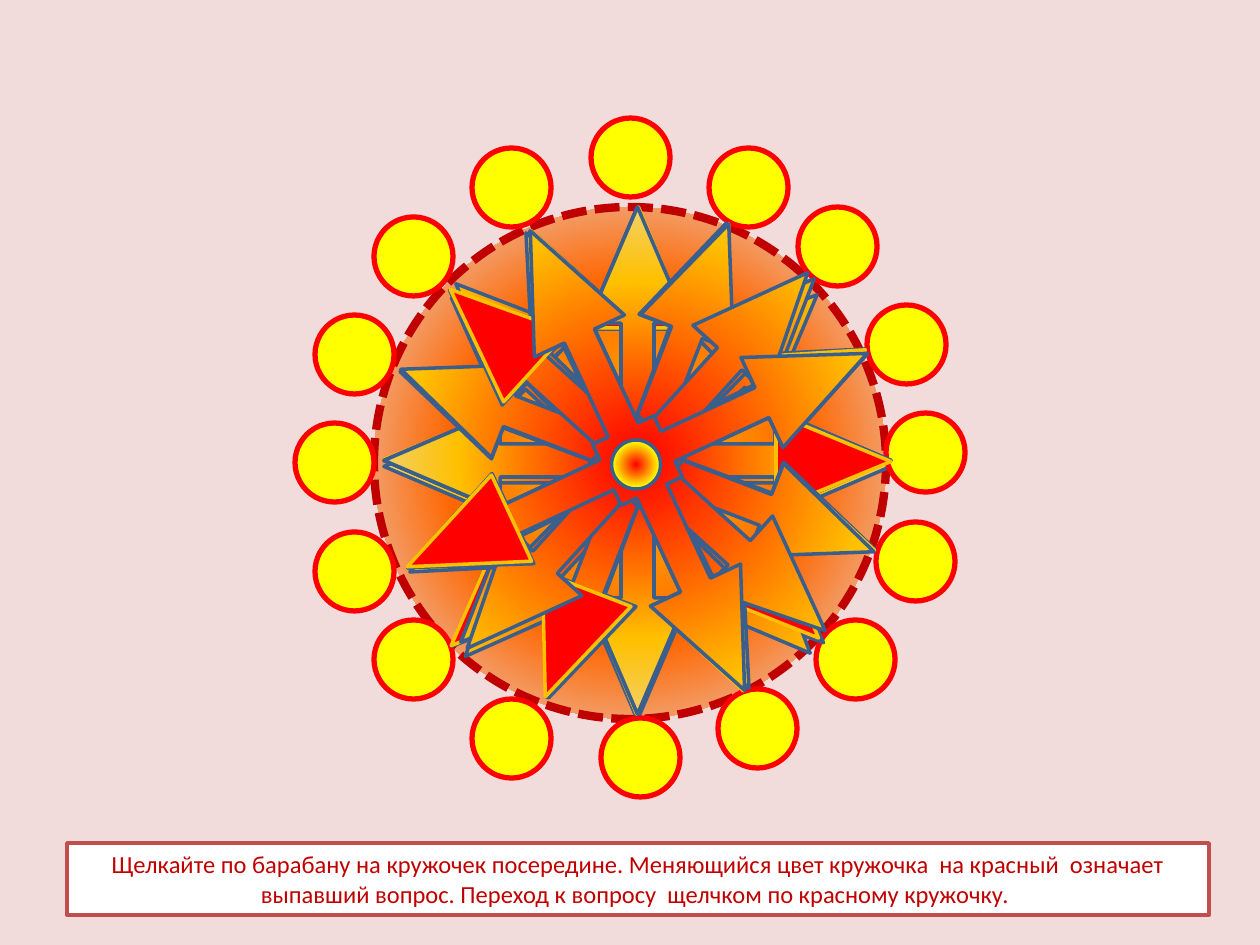
from pptx import Presentation
from pptx.dml.color import RGBColor
from pptx.enum.dml import MSO_LINE
from pptx.enum.shapes import MSO_SHAPE
from pptx.enum.text import MSO_ANCHOR, MSO_AUTO_SIZE, PP_ALIGN
from pptx.oxml import parse_xml
from pptx.oxml.ns import nsdecls, qn
from pptx.util import Emu, Pt

SCALE = 914400 / 126
HUES = {
    "back": "F2DCDB",
    "red": "FF0000",
    "dark": "C00000",
    "gold": "FFC000",
    "fire": "FF6600",
    "sun": "FFFF00",
    "pale": "E1E8F5",
    "blue": "3A5F8C",
    "brick": "C0504D",
    "white": "FFFFFF",
}
DISC = (374, 207, 512, 512)
SPIN = 507
SPINS = [
    (384, 213, 0), (384, 217, 42.8), (381, 217, 226.1), (384, 207, 270),
    (384, 207, 155.1), (384, 207, 180), (384, 207, 0), (384, 207, 90),
    (384, 207, 134.2), (384, 207, 334.9), (384, 207, 20.9), (384, 207, 63.9),
    (384, 207, 110.5), (384, 207, 201.1), (384, 207, 312.2), (384, 207, 245),
]
BALL = 79
BALLS = [
    (591, 118), (601, 718), (886, 413), (295, 423),
    (798, 207), (374, 217), (374, 620), (816, 620),
    (709, 148), (472, 148), (315, 315), (867, 305),
    (876, 522), (315, 532), (718, 689), (472, 699),
]
HINT = (
    "Щелкайте по барабану на кружочек посередине. "
    "Меняющийся цвет кружочка  на красный  означает выпавший вопрос. "
    "Переход к вопросу  щелчком по красному кружочку. "
)


def px(size):
    return Emu(round(size * SCALE))


def tint(name):
    return RGBColor.from_string(HUES[name])


def glow(shape, names):
    stops = "".join(
        f'<a:gs pos="{i * 50000}"><a:srgbClr val="{HUES[name]}"/></a:gs>'
        for i, name in enumerate(names)
    )
    grad = parse_xml(
        f'<a:gradFill {nsdecls("a")} rotWithShape="1"><a:gsLst>{stops}</a:gsLst>'
        '<a:path path="circle"><a:fillToRect l="50000" t="50000" '
        'r="50000" b="50000"/></a:path></a:gradFill>'
    )
    props = shape.element.spPr
    props.replace(props.find(qn("a:noFill")), grad)


def draw(shapes, kind, box, fill=None, line=None, width=2):
    shape = shapes.add_shape(kind, *map(px, box))
    shape.shadow.inherit = False
    if isinstance(fill, str):
        shape.fill.solid()
        shape.fill.fore_color.rgb = tint(fill)
    else:
        shape.fill.background()
        if fill:
            glow(shape, fill)
    if line:
        shape.line.color.rgb = tint(line)
        shape.line.width = Pt(width)
    else:
        shape.line.fill.background()
    return shape


def add_disc(shapes):
    draw(shapes, MSO_SHAPE.OVAL, DISC, ("gold", "fire", "pale"))
    rim = draw(shapes, MSO_SHAPE.OVAL, DISC, line="dark", width=4.75)
    rim.line.dash_style = MSO_LINE.SQUARE_DOT


def add_spin(shapes, left, top, turn):
    group = shapes.add_group_shape()
    star = draw(group.shapes, MSO_SHAPE.QUAD_ARROW_CALLOUT,
                (left, top, SPIN, SPIN), ("red", "gold", "pale"), "blue")
    for i, value in enumerate((0.065, 0.098, 0.229, 0.133)):
        star.adjustments[i] = value
    draw(group.shapes, MSO_SHAPE.ISOSCELES_TRIANGLE,
         (left + 207, top, 95, 115), "red", "gold")
    draw(group.shapes, MSO_SHAPE.OVAL,
         (left + 226, top + 226, 49, 49), ("red", "sun", "pale"), "blue")
    group.rotation = turn


def add_ball(shapes, left, top):
    draw(shapes, MSO_SHAPE.OVAL, (left, top, BALL, BALL), "sun", "red", 3)


def add_hint(shapes):
    shape = draw(shapes, MSO_SHAPE.RECTANGLE, (67, 843, 1142, 72), "white", "brick")
    frame = shape.text_frame
    frame.word_wrap = True
    frame.auto_size = MSO_AUTO_SIZE.SHAPE_TO_FIT_TEXT
    frame.vertical_anchor = MSO_ANCHOR.TOP
    para = frame.paragraphs[0]
    para.alignment = PP_ALIGN.CENTER
    run = para.add_run()
    run.text = HINT
    run.font.name = "Calibri"
    run.font.size = Pt(14)
    run.font.color.rgb = tint("dark")


def main():
    deck = Presentation()
    deck.slide_width, deck.slide_height = px(1260), px(945)
    slide = deck.slides.add_slide(deck.slide_layouts[6])
    slide.background.fill.solid()
    slide.background.fill.fore_color.rgb = tint("back")
    shapes = slide.shapes
    add_disc(shapes)
    add_spin(shapes, *SPINS[0])
    for ball in BALLS:
        add_ball(shapes, *ball)
    for spin in SPINS[1:]:
        add_spin(shapes, *spin)
    add_hint(shapes)
    deck.save("out.pptx")


if __name__ == "__main__":
    main()
